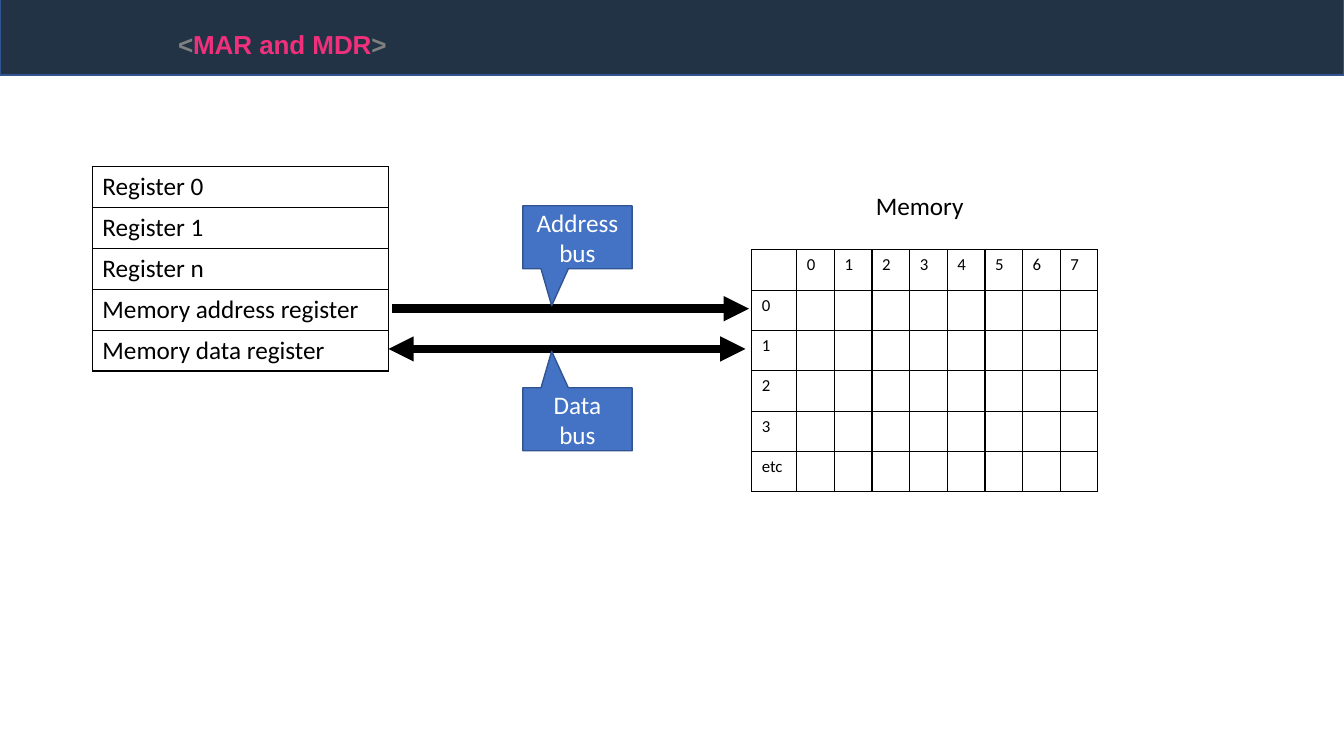
from lxml import etree
from pptx import Presentation
from pptx.dml.color import RGBColor
from pptx.enum.shapes import MSO_CONNECTOR, MSO_SHAPE
from pptx.enum.text import MSO_ANCHOR, MSO_AUTO_SIZE, PP_ALIGN
from pptx.oxml import parse_xml
from pptx.oxml.ns import nsdecls, qn
from pptx.util import Pt

RECTANGLE = MSO_SHAPE.RECTANGLE
CALLOUT = MSO_SHAPE.RECTANGULAR_CALLOUT
STRAIGHT = MSO_CONNECTOR.STRAIGHT
MIDDLE, TOP = MSO_ANCHOR.MIDDLE, MSO_ANCHOR.TOP
CENTER, LEFT = PP_ALIGN.CENTER, PP_ALIGN.LEFT
GROW = MSO_AUTO_SIZE.SHAPE_TO_FIT_TEXT

NAVY = RGBColor(0x22, 0x33, 0x46)
OUTLINE = RGBColor(0x32, 0x54, 0x91)
BLUE = RGBColor(0x44, 0x72, 0xC4)
PINK = RGBColor(0xF1, 0x30, 0x7C)
GRAY = RGBColor(0x80, 0x80, 0x80)
BLACK = RGBColor(0, 0, 0)
WHITE = RGBColor(0xFF, 0xFF, 0xFF)

TITLE_ONLY = 5
WIDTH, HEIGHT = 960, 540


class SlideBuilder:
    body_font = "Calibri"
    title_font = "Arial"
    body_size = 18
    title_size = 32

    def __init__(self, deck):
        self.page = deck.slides.add_slide(deck.slide_layouts[TITLE_ONLY])
        self.shapes = self.page.shapes

    def style(self, font, size, color, name=body_font):
        font.name = name
        font.size = Pt(size)
        font.color.rgb = color

    def shape(self, kind, left, top, width, height, fill):
        box = self.shapes.add_shape(kind, Pt(left), Pt(top), Pt(width), Pt(height))
        box.shadow.inherit = False
        box.fill.solid()
        box.fill.fore_color.rgb = fill
        box.line.color.rgb = OUTLINE
        box.line.width = Pt(1)
        return box

    def banner(self, top, height):
        box = self.shape(RECTANGLE, 0, top, WIDTH, height, NAVY)
        self.shapes._spTree.insert(2, box._element)

    def title(self, left, top, width, height, pieces):
        box = self.shapes.title
        box.left, box.top, box.width, box.height = Pt(left), Pt(top), Pt(width), Pt(height)
        frame = box.text_frame
        frame.word_wrap = False
        frame.auto_size = GROW
        frame.vertical_anchor = TOP
        para = frame.paragraphs[0]
        para.alignment = LEFT
        for text, color in pieces:
            span = para.add_run()
            span.text = text
            self.style(span.font, self.title_size, color, self.title_font)
            span.font.bold = True
            span.font._element.set("baseline", "30000")

    def label(self, left, top, width, height, text):
        box = self.shapes.add_textbox(Pt(left), Pt(top), Pt(width), Pt(height))
        frame = box.text_frame
        frame.word_wrap = True
        frame.auto_size = GROW
        frame.text = text
        self.style(frame.paragraphs[0].runs[0].font, self.body_size, BLACK)

    def callout(self, left, top, width, height, pointer, text):
        box = self.shape(CALLOUT, left, top, width, height, BLUE)
        box.adjustments[0], box.adjustments[1] = pointer
        frame = box.text_frame
        frame.word_wrap = True
        frame.vertical_anchor = MIDDLE
        frame.text = text
        para = frame.paragraphs[0]
        para.alignment = CENTER
        self.style(para.runs[0].font, self.body_size, WHITE)

    def arrow(self, start, end, y, heads):
        line = self.shapes.add_connector(STRAIGHT, Pt(start), Pt(y), Pt(end), Pt(y))
        line.line.color.rgb = BLACK
        line.line.width = Pt(6)
        outline = line.line._get_or_add_ln()
        for head in heads:
            etree.SubElement(outline, qn(head)).set("type", "triangle")
        etree.SubElement(line._element.spPr, qn("a:effectLst"))

    def cell(self, cell, text, size):
        properties = cell._tc.get_or_add_tcPr()
        for side in ("lnL", "lnR", "lnT", "lnB"):
            properties.append(parse_xml(
                f'<a:{side} {nsdecls("a")} w="{Pt(1)}"><a:solidFill>'
                f'<a:srgbClr val="{BLACK}"/></a:solidFill></a:{side}>'))
        cell.fill.background()
        para = cell.text_frame.paragraphs[0]
        if text:
            para.text = text
            self.style(para.runs[0].font, size, BLACK)
        else:
            para._p.get_or_add_endParaRPr().set("sz", str(size * 100))

    def table(self, left, top, widths, row_height, rows, size):
        frame = self.shapes.add_table(
            len(rows), len(widths), Pt(left), Pt(top),
            Pt(sum(widths)), Pt(row_height * len(rows)))
        grid = frame.table
        grid.first_row = grid.horz_banding = False
        for column, width in zip(grid.columns, widths):
            column.width = Pt(width)
        for row, texts in zip(grid.rows, rows):
            row.height = Pt(row_height)
            for cell, text in zip(row.cells, texts):
                self.cell(cell, text, size)


def main():
    deck = Presentation()
    deck.slide_width, deck.slide_height = Pt(WIDTH), Pt(HEIGHT)
    slide = SlideBuilder(deck)

    slide.banner(-2.5, 56)
    slide.title(120, 13, 168.5, 46, [("<", GRAY), ("MAR and MDR", PINK), (">", GRAY)])

    registers = ["Register 0", "Register 1", "Register n",
                 "Memory address register", "Memory data register"]
    slide.table(66, 119, [211.5], 29.2, [[name] for name in registers], 18)

    addresses = [str(number) for number in range(8)]
    memory = [[""] + addresses]
    memory += [[name] + [""] * 8 for name in ("0", "1", "2", "3", "etc")]
    slide.table(537, 178.5, [32.2] + [26.9] * 8, 28.8, memory, 12)

    slide.arrow(280, 535, 220.5, ["a:tailEnd"])
    slide.arrow(277.5, 532.5, 249.25, ["a:headEnd", "a:tailEnd"])

    slide.callout(373.5, 147, 78, 45, (-0.236, 1.086), "Address bus")
    slide.callout(373.5, 277, 78, 45, (-0.236, -1.079), "Data bus")
    slide.label(618.5, 132.5, 85, 29, "Memory")

    deck.save("out.pptx")


if __name__ == "__main__":
    main()
